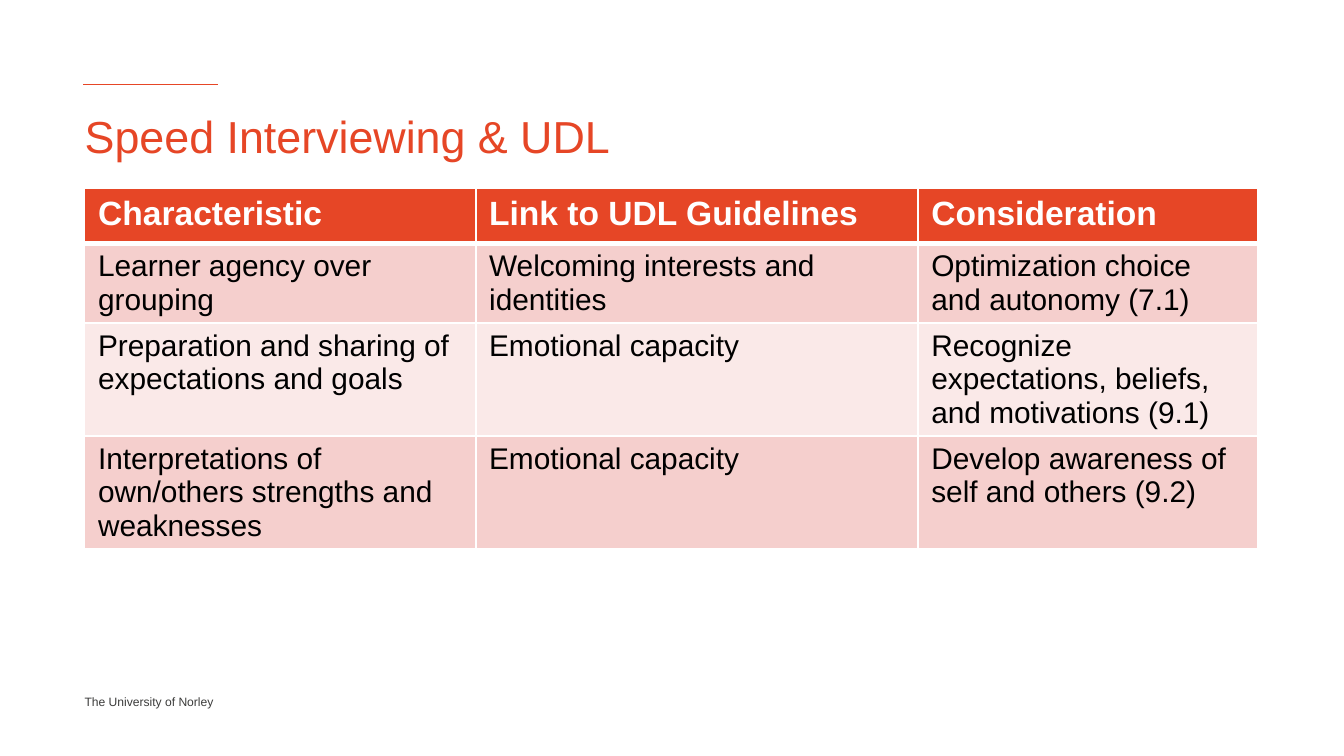
from dataclasses import dataclass

from lxml import etree
from pptx import Presentation
from pptx.dml.color import RGBColor
from pptx.enum.shapes import MSO_CONNECTOR
from pptx.enum.text import MSO_ANCHOR, PP_ALIGN
from pptx.oxml.ns import qn
from pptx.util import Inches, Pt

TOP = MSO_ANCHOR.TOP
LEFT = PP_ALIGN.LEFT
STRAIGHT = MSO_CONNECTOR.STRAIGHT
FONT = "Arial"
ACCENT, WHITE, BLACK, GREY = "E64626", "FFFFFF", "000000", "3C3C3B"
MARGIN, CONTENT_W = 0.63, 8.74
COL_WIDTHS = (2.91, 3.29, 2.53)


@dataclass(frozen=True)
class Row:
    texts: tuple[str, str, str]
    height: float
    fill: str
    size: float = 16
    color: str = BLACK
    bold: bool = False
    top: float = 1
    bottom: float = 1


ROWS = (
    Row(("Characteristic", "Link to UDL Guidelines", "Consideration"),
        0.41, ACCENT, 18, WHITE, True, bottom=3),
    Row(("Learner agency over grouping", "Welcoming interests and identities",
         "Optimization choice and autonomy (7.1)"), 0.59, "F5CFCD", top=3),
    Row(("Preparation and sharing of expectations and goals", "Emotional capacity",
         "Recognize expectations, beliefs, and motivations (9.1)"), 0.84, "FAE9E8"),
    Row(("Interpretations of own/others strengths and weaknesses", "Emotional capacity",
         "Develop awareness of self and others (9.2)"), 0.84, "F5CFCD"),
)


def rgb(value: str) -> RGBColor:
    return RGBColor.from_string(value)


def add_run(p, text: str, size: float, color: str, bold: bool = False) -> None:
    p.alignment = LEFT
    r = p.add_run()
    r.text = text
    r.font.name = FONT
    r.font.size = Pt(size)
    r.font.bold = bold
    r.font.color.rgb = rgb(color)


def set_frame(tf) -> None:
    tf.margin_left = tf.margin_right = tf.margin_top = tf.margin_bottom = 0
    tf.vertical_anchor = TOP
    tf.word_wrap = True


def add_border(cell, side: str, width: float) -> None:
    ln = etree.SubElement(cell._tc.get_or_add_tcPr(), qn(f"a:{side}"), w=str(Pt(width)))
    fill = etree.SubElement(ln, qn("a:solidFill"))
    etree.SubElement(fill, qn("a:srgbClr"), val=WHITE)


def fill_cell(cell, text: str, row: Row) -> None:
    for side, width in (("lnL", 1), ("lnR", 1), ("lnT", row.top), ("lnB", row.bottom)):
        add_border(cell, side, width)
    cell.fill.solid()
    cell.fill.fore_color.rgb = rgb(row.fill)
    add_run(cell.text_frame.paragraphs[0], text, row.size, row.color, row.bold)


def add_grid(s) -> None:
    frame = s.shapes.add_table(len(ROWS), len(COL_WIDTHS), Inches(MARGIN), Inches(1.4),
                               Inches(CONTENT_W), Inches(sum(row.height for row in ROWS)))
    table = frame.table
    for column, width in zip(table.columns, COL_WIDTHS):
        column.width = Inches(width)
    for i, row in enumerate(ROWS):
        table.rows[i].height = Inches(row.height)
        for j, text in enumerate(row.texts):
            fill_cell(table.cell(i, j), text, row)


def main() -> None:
    prs = Presentation()
    prs.slide_width = Inches(10)
    prs.slide_height = prs.slide_width * 9 // 16
    s = prs.slides.add_slide(prs.slide_layouts[5])
    s.background.fill.solid()
    s.background.fill.fore_color.rgb = rgb(WHITE)

    # Title
    title = s.shapes.title
    title.left, title.top = Inches(MARGIN), Inches(0.81)
    title.width, title.height = Inches(CONTENT_W), Inches(0.4)
    set_frame(title.text_frame)
    add_run(title.text_frame.paragraphs[0], "Speed Interviewing & UDL", 24, ACCENT)

    # Accent rule above the title
    rule = s.shapes.add_connector(STRAIGHT, Inches(1.62), Inches(0.63),
                                  Inches(0.62), Inches(0.63))
    rule.line.color.rgb = rgb(ACCENT)
    rule.line.width = Pt(0.75)
    etree.SubElement(rule._element.spPr, qn("a:effectLst"))

    # Guidelines table
    add_grid(s)

    # Footer
    footer = s.shapes.add_textbox(Inches(MARGIN), Inches(5.17), Inches(1.03), Inches(0.13))
    set_frame(footer.text_frame)
    add_run(footer.text_frame.paragraphs[0], "The University of Norley", 6.5, GREY)

    prs.save("out.pptx")


if __name__ == "__main__":
    main()
